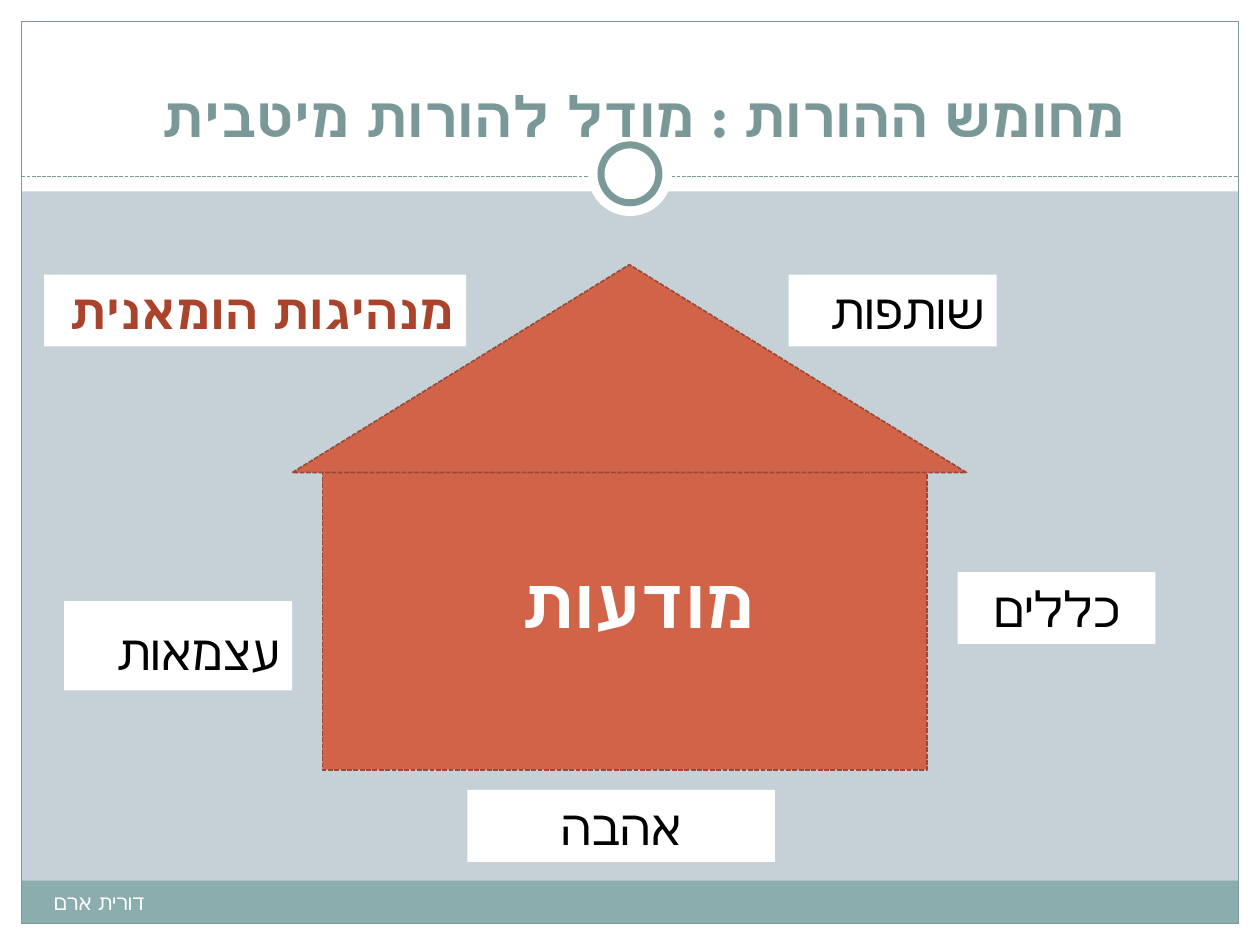
from lxml import etree
from pptx import Presentation
from pptx.dml.color import RGBColor
from pptx.enum import dml, shapes, text
from pptx.oxml.ns import qn
from pptx.util import Inches, Pt

COLORS = {
    "backdrop": "C5D1D7", "white": "FFFFFF", "black": "000000",
    "footer": "8CADAE", "frame": "7C999A", "title": "7B9899",
    "house": "D16349", "house_edge": "9B4936", "accent": "A9432B",
}
FONT = "TeX Gyre Schola"
WIDTH, HEIGHT, MARGIN = 10, 7.5, 0.17
RULE_Y = 1.4
LEFT, CENTER, RIGHT = text.PP_ALIGN.LEFT, text.PP_ALIGN.CENTER, text.PP_ALIGN.RIGHT
RECTANGLE = shapes.MSO_SHAPE.RECTANGLE
OVAL = shapes.MSO_SHAPE.OVAL

# Content: wording, then left, top, width, height
TITLE = ("מחומש ההורות : מודל להורות מיטבית", (0.86, 0.31, 8.5, 0.92))
AUTHOR = ("דורית ארם", (0.33, 7.01, 3.92, 0.4))
CORE = ("מודעות", (3.71, 4.38, 2.71, 1.08))
LABELS = [  # wording, place, alignment, color, bold
    ("אהבה", (3.71, 6.27, 2.44, 0.57), CENTER, "black", False),
    ("כללים", (7.6, 4.54, 1.57, 0.57), CENTER, "black", False),
    ("עצמאות", (0.51, 4.77, 1.81, 0.71), RIGHT, "black", False),
    ("שותפות", (6.26, 2.18, 1.65, 0.57), RIGHT, "black", False),
    ("מנהיגות הומאנית", (0.35, 2.18, 3.35, 0.57), RIGHT, "accent", True),
]
TALL_LABEL = "עצמאות"
MARGINS = [
    (0, HEIGHT - MARGIN, WIDTH, MARGIN),
    (0, 0, WIDTH, 1.52),
    (0, 0, MARGIN, HEIGHT),
    (WIDTH - MARGIN, 0, MARGIN, HEIGHT),
]
HOUSE = [
    (RECTANGLE, (2.56, 3.75, 4.8, 2.36)),
    (shapes.MSO_SHAPE.ISOSCELES_TRIANGLE, (2.32, 2.1, 5.35, 1.65)),
]


def color(name):
    return RGBColor.from_string(COLORS[name])


def inches(place):
    return [Inches(value) for value in place]


def style_line(line, name, width, dashed=False):
    line.color.rgb = color(name)
    line.width = Pt(width)
    if dashed:
        line.dash_style = dml.MSO_LINE.SQUARE_DOT


def add_shape(page, kind, place, fill=None, edge=None, width=0.75, dashed=False):
    shape = page.shapes.add_shape(kind, *inches(place))
    shape.shadow.inherit = False
    if fill:
        shape.fill.solid()
        shape.fill.fore_color.rgb = color(fill)
    else:
        shape.fill.background()
    if edge:
        style_line(shape.line, edge, width, dashed)
    else:
        shape.line.fill.background()
    return shape


def style_span(span, size, name, bold, font=FONT):
    span.font.size = Pt(size)
    span.font.bold = bold
    span.font.name = font
    span.font.color.rgb = color(name)
    # Hebrew takes the complex-script typeface
    etree.SubElement(span._r.get_or_add_rPr(), qn("a:cs"), typeface=FONT)


def write(box, words, size, name, align, bold=False, font=FONT,
          anchor=text.MSO_ANCHOR.TOP, rtl=True):
    frame = box.text_frame
    frame.word_wrap = True
    frame.vertical_anchor = anchor
    frame.text = words
    para = frame.paragraphs[0]
    para.alignment = align
    if rtl:
        para._p.get_or_add_pPr().set("rtl", "1")
    style_span(para.runs[0], size, name, bold, font)
    return para


def add_text(page, content, *style, **options):
    words, place = content
    write(page.shapes.add_textbox(*inches(place)), words, *style, **options)


def add_background(page):
    page.background.fill.solid()
    page.background.fill.fore_color.rgb = color("backdrop")
    for place in MARGINS:
        add_shape(page, RECTANGLE, place, "white")
    inner = WIDTH - 2 * MARGIN
    add_shape(page, RECTANGLE, (MARGIN, 6.99, inner, 0.34), "footer")
    add_shape(page, RECTANGLE, (MARGIN, MARGIN, inner, HEIGHT - 2 * MARGIN), edge="frame")

    # Dashed rule under the title
    rule = page.shapes.add_connector(
        shapes.MSO_CONNECTOR.STRAIGHT,
        *inches((MARGIN, RULE_Y, WIDTH - MARGIN, RULE_Y)))
    style_line(rule.line, "frame", 0.75, dashed=True)
    etree.SubElement(rule._element.spPr, qn("a:effectLst"))

    # Ring centred on the page
    for size, edge in ((0.67, None), (0.46, "frame")):
        place = (WIDTH / 2 - size / 2, 1.38 - size / 2, size, size)
        add_shape(page, OVAL, place, "white", edge, width=4)


def main():
    deck = Presentation()
    deck.slide_width, deck.slide_height = Inches(WIDTH), Inches(HEIGHT)
    page = deck.slides.add_slide(deck.slide_layouts[6])
    add_background(page)
    add_text(page, TITLE, 32, "title", CENTER, bold=True,
             anchor=text.MSO_ANCHOR.BOTTOM)

    # House
    for kind, place in HOUSE:
        add_shape(page, kind, place, "house", "house_edge", 0.9, dashed=True)

    # Labels around the house
    for words, place, align, name, bold in LABELS:
        label = add_shape(page, RECTANGLE, place, "white")
        para = write(label, words, 28, name, align, bold)
        if words == TALL_LABEL:
            span = para.add_run()
            span.text = " "
            style_span(span, 36, name, bold)

    # Author and centre word
    add_text(page, AUTHOR, 12, "white", LEFT)
    add_text(page, CORE, 40, "white", CENTER, bold=True, font="Arial", rtl=False)
    deck.save("out.pptx")


if __name__ == "__main__":
    main()
